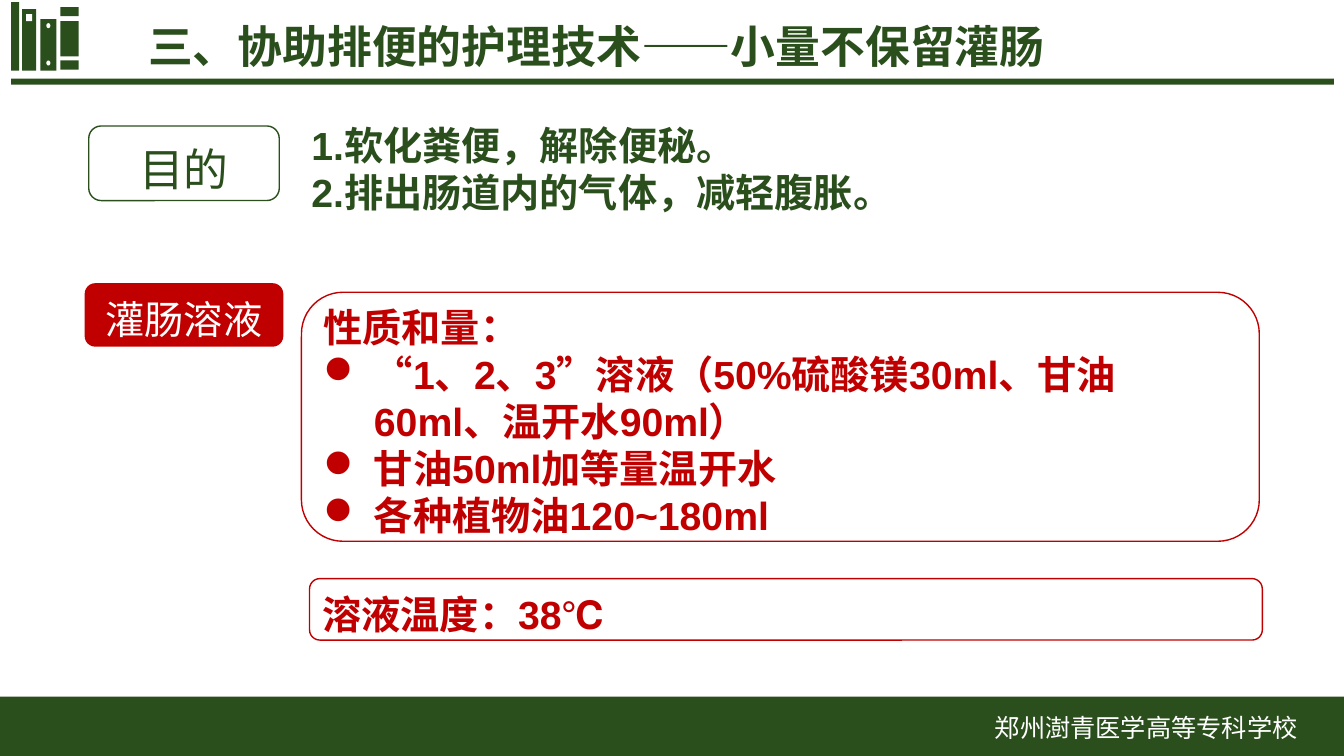
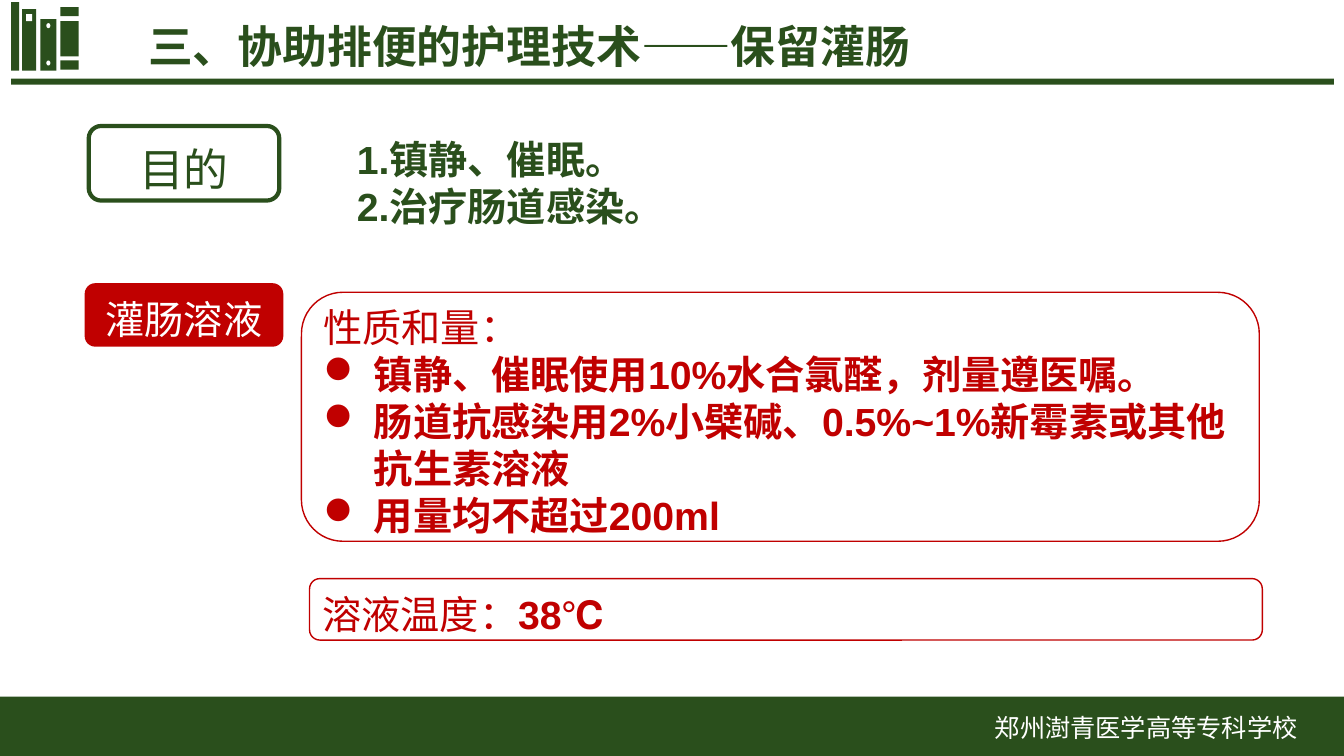
import pptx
import pptx.util
import pptx.dml.color
import pptx.enum.shapes
import pptx.enum.text
import pptx.oxml.ns
import lxml.etree

PX = 9144
COLORS = {"green": "2A4F1C", "red": "C00000", "white": "FFFFFF"}
CJK_FONT = "Noto Sans CJK SC"
LINE_RATIO = 1.2
BASELINE_SHIFT = 0.15
SHAPES = pptx.enum.shapes.MSO_SHAPE
ALIGN = pptx.enum.text.PP_ALIGN
ANCHOR = pptx.enum.text.MSO_ANCHOR


def add_box(slide, kind, box, fill=None, line=None, weight=1):
    shape = slide.shapes.add_shape(kind, *[value * PX for value in box])
    shape.shadow.inherit = False
    if fill:
        shape.fill.solid()
        shape.fill.fore_color.rgb = pptx.dml.color.RGBColor.from_string(COLORS[fill])
    else:
        shape.fill.background()
    if line:
        shape.line.color.rgb = pptx.dml.color.RGBColor.from_string(COLORS[line])
        shape.line.width = pptx.util.Pt(weight)
    else:
        shape.line.fill.background()
    return shape


def write_text(shape, lines, size=28, color="green", font="Arial", bold=False,
               align=ALIGN.LEFT, anchor=ANCHOR.MIDDLE, wrap=True, bullets_from=None):
    frame = shape.text_frame
    frame.word_wrap = wrap
    frame.vertical_anchor = anchor
    shift = round(size * BASELINE_SHIFT)
    frame.margin_top = (5 + shift) * PX
    frame.margin_bottom = (5 - shift) * PX
    for index, line in enumerate(lines):
        paragraph = frame.add_paragraph() if index else frame.paragraphs[0]
        paragraph.alignment = align
        paragraph.line_spacing = pptx.util.Pt(size * LINE_RATIO)
        if bullets_from is not None and index >= bullets_from:
            properties = paragraph._p.get_or_add_pPr()
            properties.set("marL", str(50 * PX))
            properties.set("indent", str(-50 * PX))
            for tag, key, value in (("a:buFont", "typeface", "Wingdings"), ("a:buChar", "char", "l")):
                lxml.etree.SubElement(properties, pptx.oxml.ns.qn(tag)).set(key, value)
        runs = [(line, bold)] if isinstance(line, str) else line
        for words, is_bold in runs:
            run = paragraph.add_run()
            run.text = words
            run.font.name = font
            run.font.size = pptx.util.Pt(size)
            run.font.bold = is_bold
            run.font.color.rgb = pptx.dml.color.RGBColor.from_string(COLORS[color])
            run_properties = run._r.get_or_add_rPr()
            run_properties.set("lang", "zh-CN")
            east_asian = lxml.etree.SubElement(run_properties, pptx.oxml.ns.qn("a:ea"))
            east_asian.set("typeface", CJK_FONT)


GREEN_BARS = [
    (11, 78, 1312, 6),
    (11, 2, 8, 68),
    (60, 60, 18, 9),
    (60, 21, 18, 35),
    (60, 7, 18, 9),
    (40, 19, 16, 51),
    (22, 9, 14, 61),
    (0, 691, 1333, 59),
]
BOOK_HOLES = [
    (SHAPES.RECTANGLE, (26, 14, 6, 7)),
    (SHAPES.OVAL, (46, 23, 4, 5)),
    (SHAPES.OVAL, (46, 60, 4, 5)),
]
TOPICS = [
    {
        "title": "三、协助排便的护理技术——小量不保留灌肠",
        "purpose_box": (299, 111, 945, 104),
        "purposes": ["1.软化粪便，解除便秘。", "2.排出肠道内的气体，减轻腹胀。"],
        "label_weight": 1,
        "solution_heading": [("性质和量：", True)],
        "solutions": [
            "“1、2、3”溶液（50%硫酸镁30ml、甘油60ml、温开水90ml）",
            "甘油50ml加等量温开水",
            "各种植物油120~180ml",
        ],
        "temperature": [("溶液温度：38℃", True)],
    },
    {
        "title": "三、协助排便的护理技术——保留灌肠",
        "purpose_box": (344, 125, 945, 104),
        "purposes": ["1.镇静、催眠。", "2.治疗肠道感染。"],
        "label_weight": 3,
        "solution_heading": [("性质和量：", False)],
        "solutions": [
            "镇静、催眠使用10%水合氯醛，剂量遵医嘱。",
            "肠道抗感染用2%小檗碱、0.5%~1%新霉素或其他抗生素溶液",
            "用量均不超过200ml",
        ],
        "temperature": [("溶液温度：", False), ("38℃", True)],
    },
]

presentation = pptx.Presentation()
presentation.slide_width = pptx.util.Inches(13.33)
presentation.slide_height = pptx.util.Inches(7.5)

for topic in TOPICS:
    slide = presentation.slides.add_slide(presentation.slide_layouts[6])

    for bar in GREEN_BARS:
        add_box(slide, SHAPES.RECTANGLE, bar, fill="green")
    for kind, hole in BOOK_HOLES:
        add_box(slide, kind, hole, fill="white")

    school = slide.shapes.add_textbox(*[value * PX for value in (977, 699, 323, 51)])
    write_text(school, ["郑州澍青医学高等专科学校"], size=18, color="white", font=CJK_FONT,
               anchor=ANCHOR.TOP, wrap=False)
    title = slide.shapes.add_textbox(*[value * PX for value in (137, 9, 963, 63)])
    write_text(title, [topic["title"]], size=32, font=CJK_FONT, bold=True, anchor=ANCHOR.TOP)

    purposes = slide.shapes.add_textbox(*[value * PX for value in topic["purpose_box"]])
    write_text(purposes, topic["purposes"], bold=True, anchor=ANCHOR.TOP)
    purpose_label = add_box(slide, SHAPES.ROUNDED_RECTANGLE, (88, 125, 189, 74),
                            line="green", weight=topic["label_weight"])
    write_text(purpose_label, ["目的"], size=32, align=ALIGN.CENTER)

    solution_label = add_box(slide, SHAPES.ROUNDED_RECTANGLE, (84, 281, 197, 63), fill="red")
    write_text(solution_label, ["灌肠溶液"], color="white", align=ALIGN.CENTER)
    solutions = add_box(slide, SHAPES.ROUNDED_RECTANGLE, (299, 290, 950, 247), line="red")
    write_text(solutions, [topic["solution_heading"], *topic["solutions"]],
               color="red", bold=True, bullets_from=1)
    temperature = add_box(slide, SHAPES.ROUNDED_RECTANGLE, (307, 574, 945, 61), line="red")
    write_text(temperature, [topic["temperature"]], color="red")

presentation.save("out.pptx")
